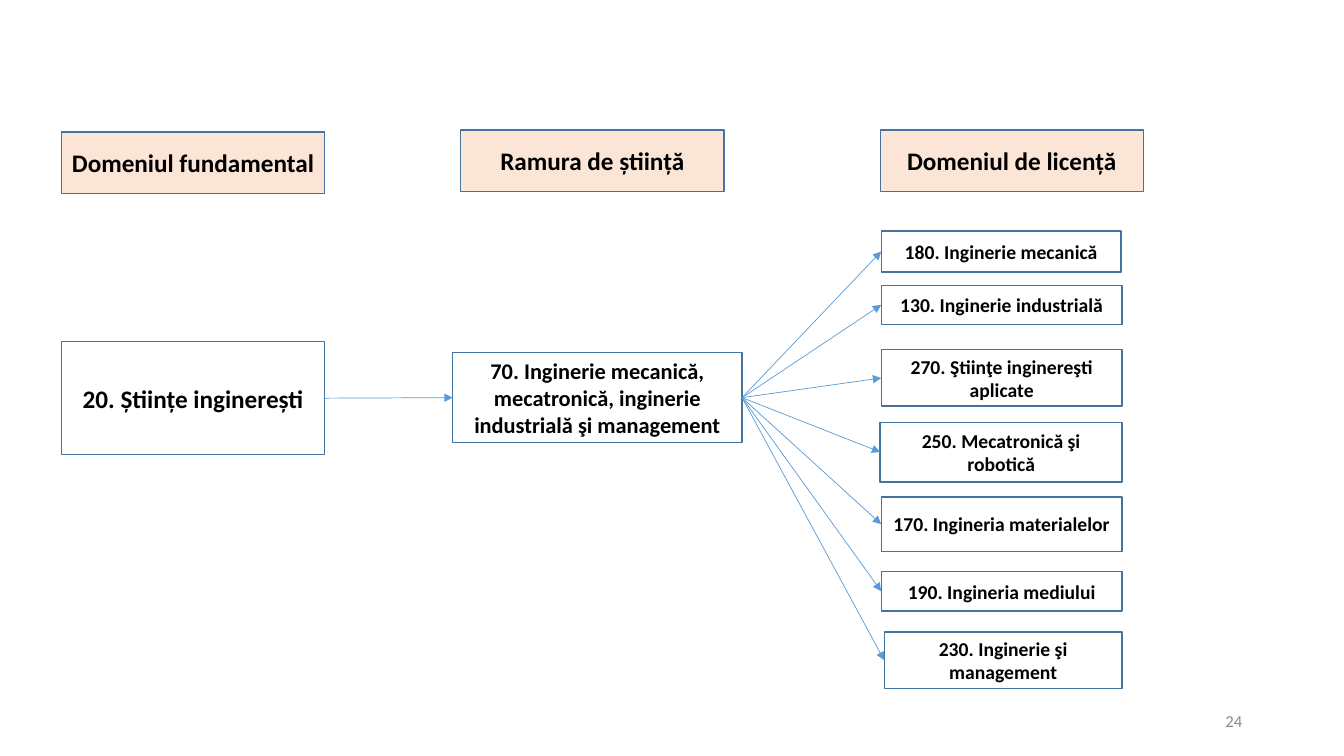
"""Build the slide that maps a fundamental domain to its science branch and degree fields."""
import pptx
import pptx.util
import pptx.dml.color
import pptx.enum.shapes
import pptx.enum.text
import pptx.oxml
import pptx.oxml.ns

PX = 9144
RGB = pptx.dml.color.RGBColor.from_string
ALIGN = pptx.enum.text.PP_ALIGN
THEME = {
    "header": RGB("FBE5D6"), "border": RGB("43739E"), "arrow": RGB("5B9BD5"),
    "text": RGB("000000"), "number": RGB("8C8C8C"), "font": "Calibri",
    "large": 18, "branch": 16, "field": 14, "small": 12, "outline": 1, "thin": 0.5,
}


def add_box(s, rect, text, size, fill=None, line="border", color="text", align=ALIGN.CENTER):
    sp = s.shapes.add_shape(pptx.enum.shapes.MSO_SHAPE.RECTANGLE, *(v * PX for v in rect))
    sp.shadow.inherit = False
    if fill:
        sp.fill.solid()
        sp.fill.fore_color.rgb = THEME[fill]
    else:
        sp.fill.background()
    if line:
        sp.line.color.rgb = THEME[line]
        sp.line.width = pptx.util.Pt(THEME["outline"])
    else:
        sp.line.fill.background()
    tf = sp.text_frame
    tf.word_wrap = True
    tf.vertical_anchor = pptx.enum.text.MSO_ANCHOR.MIDDLE
    p = tf.paragraphs[0]
    p.alignment = align
    r = p.add_run()
    r.text = text
    r.font.color.rgb = THEME[color]
    style = {"name": THEME["font"], "size": pptx.util.Pt(THEME[size]), "bold": color == "text"}
    for name, value in style.items():
        setattr(r.font, name, value)
    return sp


def add_arrow(s, start, end):
    c = s.shapes.add_connector(pptx.enum.shapes.MSO_CONNECTOR.STRAIGHT, 0, 0, 0, 0)
    c.begin_connect(start, 3)
    c.end_connect(end, 1)
    c.line.color.rgb = THEME["arrow"]
    c.line.width = pptx.util.Pt(THEME["thin"])
    ns = pptx.oxml.ns.nsdecls("a")
    c.line._get_or_add_ln().append(pptx.oxml.parse_xml(f'<a:tailEnd {ns} type="triangle"/>'))
    c._element.spPr.append(pptx.oxml.parse_xml(f"<a:effectLst {ns}/>"))


prs = pptx.Presentation()
prs.slide_width, prs.slide_height = 1333 * PX, 750 * PX
s = prs.slides.add_slide(prs.slide_layouts[6])

headers = [
    (61, 131, "Domeniul fundamental"),
    (457, 129, "Ramura de știință"),
    (873, 129, "Domeniul de licență"),
]
for x, y, text in headers:
    add_box(s, (x, y, 261, 61), text, "large", fill="header")

domain = add_box(s, (61, 339, 261, 112), "20. Științe inginerești", "large")
branch = add_box(
    s, (449, 350, 287, 89),
    "70. Inginerie mecanică, mecatronică, inginerie industrială şi management", "branch",
)
add_arrow(s, domain, branch)

fields = [
    ((874, 229, 238, 41), "180. Inginerie mecanică"),
    ((874, 283, 239, 39), "130. Inginerie industrială"),
    ((874, 347, 239, 56), "270. Ştiinţe inginereşti aplicate"),
    ((873, 419, 240, 59), "250. Mecatronică şi robotică"),
    ((874, 493, 239, 54), "170. Ingineria materialelor"),
    ((874, 567, 239, 39), "190. Ingineria mediului"),
    ((877, 627, 236, 56), "230. Inginerie şi management"),
]
for rect, text in fields:
    add_arrow(s, branch, add_box(s, rect, text, "field"))

add_box(s, (942, 695, 300, 40), "24", "small", line=None, color="number", align=ALIGN.RIGHT)

prs.save("out.pptx")
